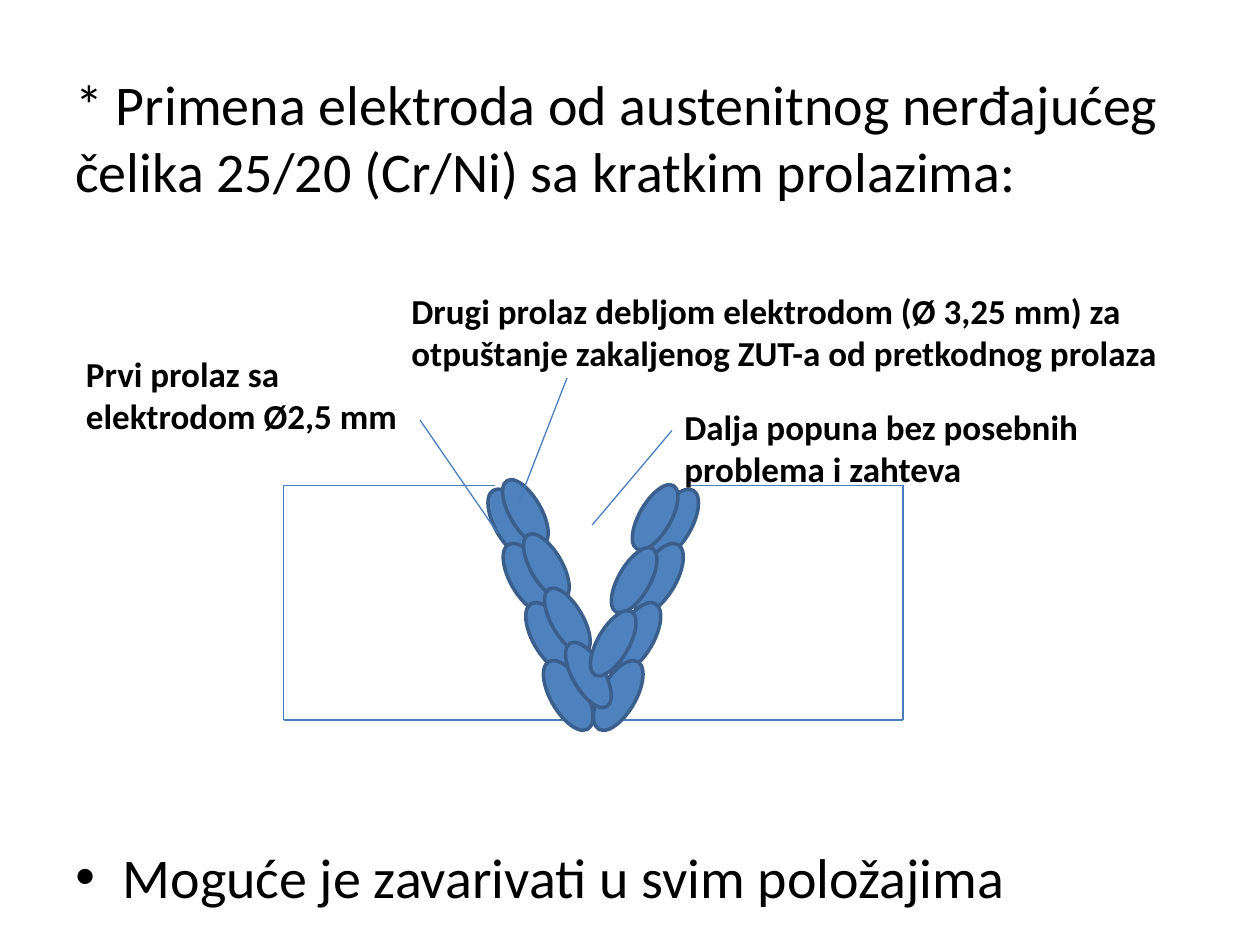
from pptx import Presentation
from pptx.dml.color import RGBColor
from pptx.enum.shapes import MSO_CONNECTOR, MSO_SHAPE
from pptx.enum.text import PP_ALIGN
from pptx.oxml.ns import qn
from pptx.util import Pt
from lxml.etree import SubElement

AXIS = 339  # centre line of the V joint
FONT = "Calibri"


def color(code):
    return RGBColor.from_string(code)


def style(para, size, bold=False):
    para.alignment = PP_ALIGN.LEFT
    for run in para.runs:
        run.font.name = FONT
        run.font.size = Pt(size)
        run.font.bold = bold
        run.font.color.rgb = color("000000")


def add_text(slide, left, top, width, height, lines, size, bold=False):
    box = slide.shapes.add_textbox(Pt(left), Pt(top), Pt(width), Pt(height))
    frame = box.text_frame
    frame.word_wrap = True
    frame.text = "\n".join(lines)
    for para in frame.paragraphs:
        style(para, size, bold)
    return frame


def add_bullet(para, indent):
    props = para._p.get_or_add_pPr()
    props.set("marL", str(Pt(indent)))
    props.set("indent", str(-Pt(indent)))
    SubElement(props, qn("a:buFont")).set("typeface", "Arial")
    SubElement(props, qn("a:buChar")).set("char", "•")


def add_line(slide, x1, y1, x2, y2):
    line = slide.shapes.add_connector(
        MSO_CONNECTOR.STRAIGHT, Pt(x1), Pt(y1), Pt(x2), Pt(y2))
    line.line.color.rgb = color("4B7EBC")
    line.line.width = Pt(0.75)
    SubElement(line._element.spPr, qn("a:effectLst"))


def add_bead(slide, x, y, width, height, angle):
    bead = slide.shapes.add_shape(
        MSO_SHAPE.OVAL, Pt(x - width / 2), Pt(y - height / 2),
        Pt(width), Pt(height))
    bead.rotation = angle
    bead.shadow.inherit = False
    bead.fill.solid()
    bead.fill.fore_color.rgb = color("4F81BD")
    bead.line.color.rgb = color("3A5F8C")
    bead.line.width = Pt(2)


def add_plate(slide, side):
    """Plate outline, open at the joint; side is -1 (left) or 1 (right)."""
    edge, upper, lower = (AXIS + side * gap for gap in (177, 56, 6))
    top, base = 277.4, 411.4
    add_line(slide, upper, top, edge, top)
    add_line(slide, lower, base, edge, base)
    add_line(slide, edge, top, edge, base)


def main():
    deck = Presentation()
    deck.slide_width, deck.slide_height = Pt(720), Pt(540)
    slide = deck.slides.add_slide(deck.slide_layouts[6])

    # Body text: heading above the drawing, bullet below it
    body = add_text(slide, 36, 36, 648, 480, [
        "* Primena elektroda od austenitnog nerđajućeg čelika 25/20 (Cr/Ni) "
        "sa kratkim prolazima:",
        "Moguće je zavarivati u svim položajima"], 32)
    last = body.paragraphs[1]
    last.space_before = Pt(365)
    add_bullet(last, 27)

    # Plates and first pass, mirrored about the joint
    outer = [(46, 299.5), (37.3, 330.5), (24.4, 364.3), (14.3, 397.4)]
    for side, angle in ((-1, 60), (1, 300)):
        add_plate(slide, side)
        for gap, y in outer:
            add_bead(slide, AXIS + side * gap, y, 44.6, 20.2, angle)

    # Second pass: count, start, step and angle of each row
    for count, x, y, dx, dy, angle in ((4, 300.2, 292.7, 12, 31, 60),
                                       (3, 374.4, 295.6, -12, 36, 300)):
        for i in range(count):
            add_bead(slide, x + i * dx, y + i * dy, 41.8, 18, angle)

    # Leaders
    for ends in ((284.4, 304.6, 240, 240),
                 (296.6, 286.6, 324, 216),
                 (338.4, 300, 384, 246)):
        add_line(slide, *ends)

    # Labels
    for left, top, width, label in (
            (42, 198, 204, "Prvi prolaz sa elektrodom Ø2,5 mm"),
            (228, 162, 456, "Drugi prolaz debljom elektrodom (Ø 3,25 mm) za "
                            "otpuštanje zakaljenog ZUT-a od pretkodnog prolaza"),
            (384, 228, 294, "Dalja popuna bez posebnih problema i zahteva")):
        add_text(slide, left, top, width, 55.4, [label], 20, True)

    deck.save("out.pptx")


if __name__ == "__main__":
    main()
